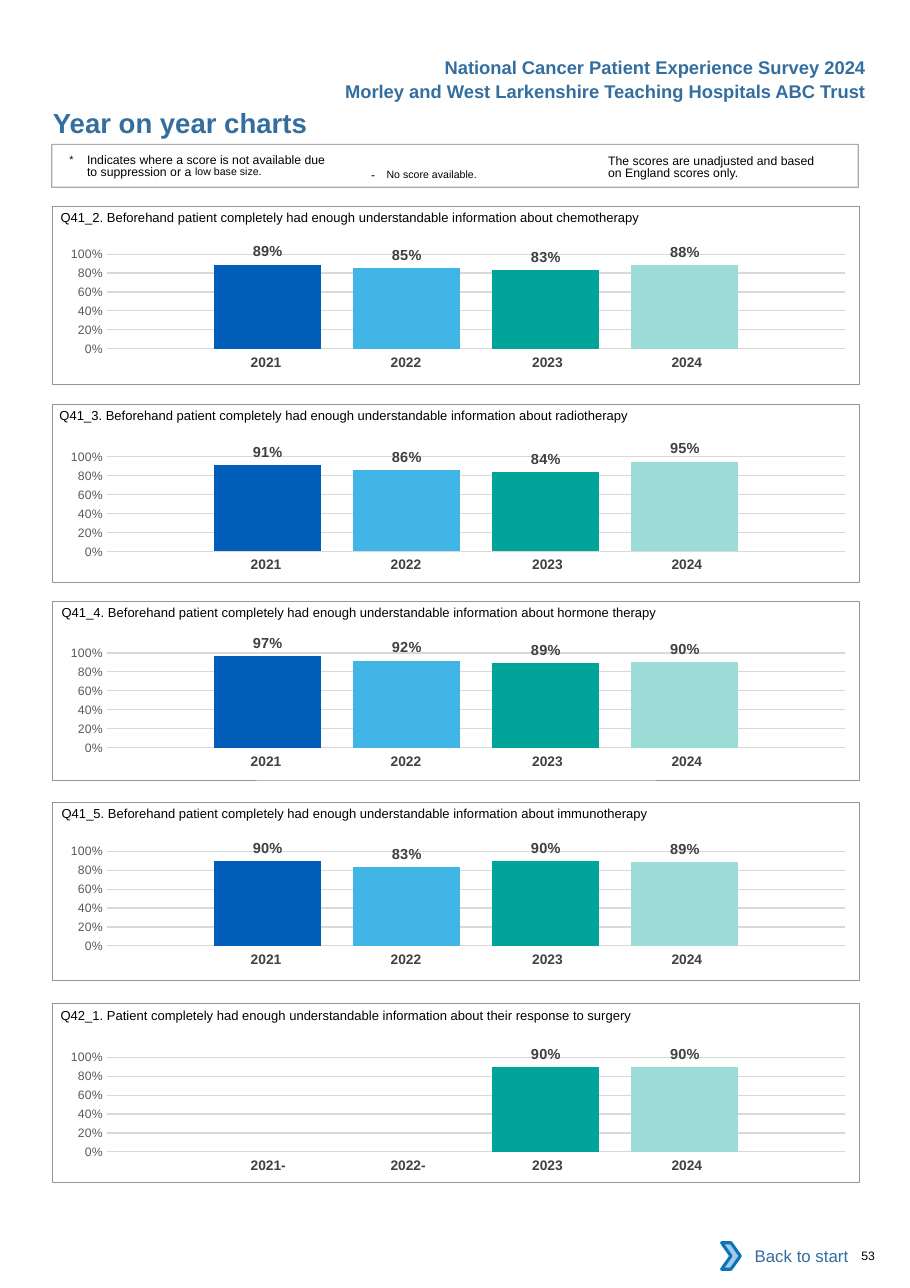
from lxml.etree import SubElement
from pptx import Presentation
from pptx.chart.data import CategoryChartData
from pptx.dml.color import RGBColor
from pptx.enum.chart import XL_CHART_TYPE, XL_LABEL_POSITION, XL_TICK_MARK
from pptx.enum.shapes import MSO_SHAPE
from pptx.enum.text import MSO_ANCHOR, MSO_AUTO_SIZE, PP_ALIGN
from pptx.oxml import parse_xml
from pptx.oxml.ns import nsdecls, qn
from pptx.util import Inches, Pt

COLORS = {
    "heading": "336E9F", "text": "000000", "white": "FFFFFF", "frame": "939598",
    "year": "414042", "axis": "595959", "label": "404040", "grid": "D9D9D9",
    "arrow_fill": "A8C7E9", "arrow_line": "0A74BB",
    "2021": "005EB8", "2022": "41B6E6", "2023": "00A499", "2024": "9CDCD7",
}
YEARS = ["2021", "2022", "2023", "2024"]
YEAR_WIDTHS = [1.27, 1.27, 1.34, 1.27]
YEAR_INSETS = [(0.1, 0), (0.1, 0), (0.1, 0.04), (0.1, 0.12)]
INFORMED = "Beforehand patient completely had enough understandable information about "
QUESTIONS = [
    (1.87, 2.12, 0.55, "Q41_2. " + INFORMED + "chemotherapy", [0.89, 0.85, 0.83, 0.88]),
    (3.67, 3.96, 0.54, "Q41_3. " + INFORMED + "radiotherapy", [0.91, 0.86, 0.84, 0.95]),
    (5.46, 5.74, 0.56, "Q41_4. " + INFORMED + "hormone therapy", [0.97, 0.92, 0.89, 0.9]),
    (7.28, 7.54, 0.56, "Q41_5. " + INFORMED + "immunotherapy", [0.9, 0.83, 0.9, 0.89]),
    (9.11, 9.41, 0.55, "Q42_1. Patient completely had enough understandable information "
     "about their response to surgery", [None, None, 0.9, 0.9]),
]


def rgb(name):
    return RGBColor.from_string(COLORS[name])


def style_font(font, size, color, bold=False, face="Arial"):
    font.name, font.size, font.bold = face, Pt(size), bold
    font.color.rgb = rgb(color)


def add_run(paragraph, text, size, color="text", bold=False, raised=0, spacing=0):
    run = paragraph.add_run()
    run.text = text
    style_font(run.font, size, color, bold)
    properties = run.font._element
    if raised:
        properties.set("baseline", str(raised * 1000))
    if spacing:
        properties.set("spc", str(int(spacing * 100)))


def set_insets(holder, left, top, right, bottom):
    holder.margin_left, holder.margin_top = Inches(left), Inches(top)
    holder.margin_right, holder.margin_bottom = Inches(right), Inches(bottom)


def add_text(shapes, box, runs, insets=(0, 0, 0, 0), align=PP_ALIGN.LEFT, wrap=True):
    frame = shapes.add_textbox(*map(Inches, box)).text_frame
    frame.word_wrap = wrap
    set_insets(frame, *insets)
    paragraph = frame.paragraphs[0]
    paragraph.alignment = align
    for text, size, *style in runs:
        add_run(paragraph, text, size, *style)
    return paragraph


def add_box(shapes, kind, box, fill=None, line=None, width=0.5):
    shape = shapes.add_shape(kind, *map(Inches, box))
    shape.shadow.inherit = False
    if fill:
        shape.fill.solid()
        shape.fill.fore_color.rgb = rgb(fill)
    else:
        shape.fill.background()
    if line:
        shape.line.color.rgb = rgb(line)
        shape.line.width = Pt(width)
    else:
        shape.line.fill.background()
    return shape


def add_years(shapes, top, values):
    frame = shapes.add_table(1, len(YEARS), Inches(1.73), Inches(top),
                             Inches(sum(YEAR_WIDTHS)), Inches(0.27))
    table = frame.table
    table.first_row = table.horz_banding = False
    for index, (year, value) in enumerate(zip(YEARS, values)):
        table.columns[index].width = Inches(YEAR_WIDTHS[index])
        cell = table.cell(0, index)
        cell.fill.background()
        left, right = YEAR_INSETS[index]
        missing = value is None
        set_insets(cell, 0.14 if missing else left, 0.05, right, 0.05)
        paragraph = cell.text_frame.paragraphs[0]
        paragraph.alignment = PP_ALIGN.CENTER
        add_run(paragraph, year + "-" if missing else year, 9, "year", True)


def set_plot_area(chart):
    plot_area = chart._chartSpace.chart.plotArea
    for old in plot_area.findall(qn("c:layout")):
        plot_area.remove(old)
    layout = parse_xml(f"<c:layout {nsdecls('c')}><c:manualLayout/></c:layout>")
    settings = {"layoutTarget": "inner", "xMode": "edge", "yMode": "edge",
                "x": "0.08", "y": "0.145", "w": "0.915", "h": "0.666"}
    for tag, value in settings.items():
        SubElement(layout[0], qn("c:" + tag)).set("val", value)
    plot_area.insert(0, layout)


def add_score_chart(shapes, top, values):
    data = CategoryChartData(number_format="0%")
    data.categories = ["1"]
    for number, value in enumerate(values, 1):
        data.add_series(f"Series {number}", [value])
    chart = shapes.add_chart(XL_CHART_TYPE.COLUMN_CLUSTERED, Inches(0.39), Inches(top),
                             Inches(7.32), Inches(1.29), data).chart
    style_font(chart.font, 10, "text", face="Calibri")
    chart.has_legend = chart.has_title = False
    chart.category_axis.visible = False
    axis = chart.value_axis
    axis.minimum_scale, axis.maximum_scale, axis.major_unit = 0, 1, 0.2
    axis.major_tick_mark = axis.minor_tick_mark = XL_TICK_MARK.NONE
    axis.format.line.fill.background()
    axis.major_gridlines.format.line.color.rgb = rgb("grid")
    axis.major_gridlines.format.line.width = Pt(0.75)
    axis.tick_labels.number_format = "0%"
    axis.tick_labels.number_format_is_linked = False
    style_font(axis.tick_labels.font, 8, "axis")
    plot = chart.plots[0]
    plot.gap_width, plot.overlap, plot.vary_by_categories = 200, -30, False
    for year, series in zip(YEARS, plot.series):
        series.format.fill.solid()
        series.format.fill.fore_color.rgb = rgb(year)
        labels = series.data_labels
        labels.show_value = True
        labels.position = XL_LABEL_POSITION.OUTSIDE_END
        labels.number_format = "0%"
        labels.number_format_is_linked = False
        style_font(labels.font, 9.5, "label", True)
    set_plot_area(chart)


def add_question(shapes, frame_top, chart_top, caption_left, caption, values):
    add_years(shapes, chart_top + 1.05, values)
    add_score_chart(shapes, chart_top, values)
    add_box(shapes, MSO_SHAPE.RECTANGLE, (0.48, frame_top, 7.32, 1.62), line="frame")
    add_text(shapes, (caption_left, frame_top - 0.06, 7.2, 0.24), [(caption, 8.5)],
             (0, 0.09, 0, 0))


def add_heading(slide):
    title = slide.shapes.title
    title.left, title.top, title.width, title.height = map(Inches, (0.47, 0.96, 4.5, 0.3))
    frame = title.text_frame
    frame.auto_size = MSO_AUTO_SIZE.NONE
    frame.vertical_anchor = MSO_ANCHOR.TOP
    set_insets(frame, 0.01, 0, 0, 0)
    frame.paragraphs[0].alignment = PP_ALIGN.LEFT
    add_run(frame.paragraphs[0], "Year on year charts", 18, "heading", True)
    for top, line in [(0.46, "National Cancer Patient Experience Survey 2024"),
                      (0.68, "Morley and West Larkenshire Teaching Hospitals ABC Trust")]:
        add_text(slide.shapes, (2.99, top, 4.97, 0.3), [(line, 12, "heading", True)],
                 (0.1, 0.05, 0.1, 0.05), PP_ALIGN.RIGHT, False)


def add_notes_panel(shapes):
    panel = shapes.add_group_shape().shapes
    unadjusted = add_text(panel, (5.52, 1.38, 2.01, 0.27), [
        ("The scores are unadjusted and based on England scores only.", 8)], (0, 0.03, 0, 0))
    add_text(panel, (3.27, 1.41, 1.83, 0.24), [
        ("- ", 8, "text", False, 0, 2.6),
        ("No score available.", 12, "text", False, 3)], (0.1, 0.05, 0.1, 0.05))
    suppressed = add_text(panel, (0.63, 1.38, 2.72, 0.27), [
        ("*\t", 12, "text", False, 3),
        ("Indicates where a score is not available due to suppression or a ", 8),
        ("low base size.", 12, "text", False, 7)], (0, 0.03, 0.32, 0))
    for note in (unadjusted, suppressed):
        note.line_spacing, note.space_before = Pt(8.1), Pt(2.5)
    hanging = suppressed._p.get_or_add_pPr()
    hanging.set("marL", str(Inches(0.16)))
    hanging.set("indent", str(-Inches(0.16)))
    border = add_box(panel, MSO_SHAPE.RECTANGLE, (0.47, 1.31, 7.32, 0.39),
                     line="frame", width=0.75)
    tint = border.line._ln.find(".//" + qn("a:srgbClr"))
    SubElement(tint, qn("a:alpha")).set("val", "80000")


def add_back_to_start(shapes):
    button = shapes.add_group_shape().shapes
    label = add_box(button, MSO_SHAPE.RECTANGLE, (6.62, 11.19, 1.18, 0.42), fill="white")
    label.text_frame.vertical_anchor = MSO_ANCHOR.MIDDLE
    paragraph = label.text_frame.paragraphs[0]
    paragraph.alignment = PP_ALIGN.RIGHT
    add_run(paragraph, "Back to start", 11, "heading")
    add_box(button, MSO_SHAPE.CHEVRON, (6.55, 11.28, 0.17, 0.24), "arrow_fill", "arrow_line", 2)


def main():
    deck = Presentation()
    deck.slide_width, deck.slide_height = Inches(8.26), Inches(11.69)
    slide = deck.slides.add_slide(deck.slide_layouts[5])
    add_heading(slide)
    for question in QUESTIONS:
        add_question(slide.shapes, *question)
    add_notes_panel(slide.shapes)
    add_back_to_start(slide.shapes)
    add_text(slide.shapes, (7.72, 11.33, 0.51, 0.13), [("53", 8)], (0.1, 0, 0, 0))
    deck.save("out.pptx")


if __name__ == "__main__":
    main()
